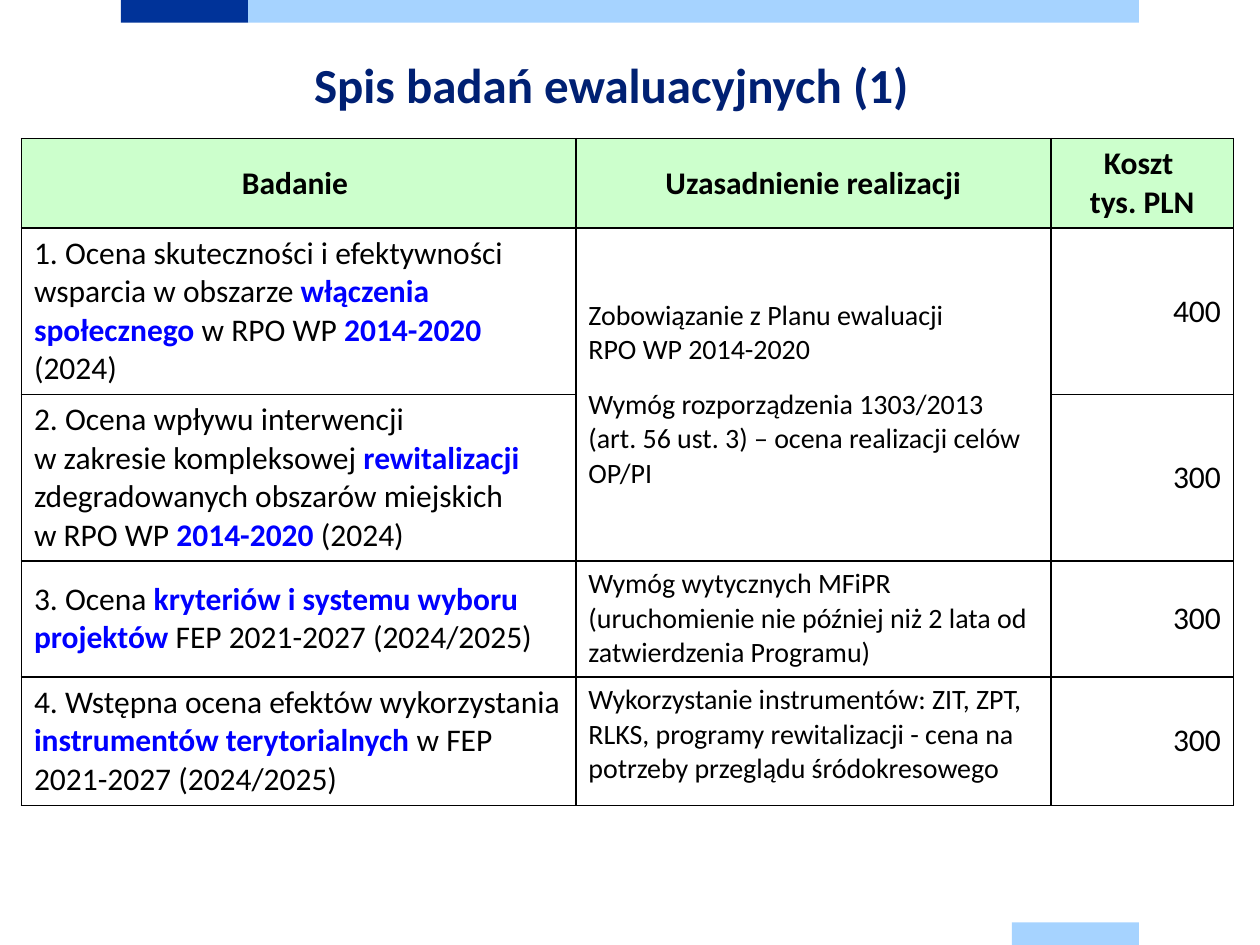
import dataclasses
import itertools
import typing

import pptx
import pptx.dml.color
import pptx.enum.shapes
import pptx.enum.text
import pptx.oxml
import pptx.oxml.ns
import pptx.util

Inches = pptx.util.Inches
Pt = pptx.util.Pt
Align = pptx.enum.text.PP_ALIGN
Anchor = pptx.enum.text.MSO_ANCHOR

FONT = "Calibri"
BLACK = "000000"
BLUE = "0000FF"
NAVY = "002073"
GREEN = "CCFFCC"
SKY = "A6D3FF"


@dataclasses.dataclass
class Bar:
    left: float
    top: float
    width: float
    fill: str


@dataclasses.dataclass
class Study:
    name: str
    reason: str
    cost: str
    height: float
    anchor: typing.Any = Anchor.MIDDLE


BARS = [
    Bar(0.96, 0, 1.01, "003399"),
    Bar(1.97, 0, 7.07, SKY),
    Bar(8.03, 7.32, 1.01, SKY),
]
WIDTHS = [4.4, 3.77, 1.45]
HEADS = ["Badanie ", "Uzasadnienie realizacji", "Koszt ¶tys. PLN"]
HEAD_HEIGHT = 0.71
STUDIES = [
    Study(
        "1. Ocena skuteczności i efektywności wsparcia w obszarze "
        "*włączenia społecznego *w RPO WP *2014-2020* (2024)",
        "Zobowiązanie z Planu ewaluacji \nRPO WP 2014-2020¶"
        "Wymóg rozporządzenia 1303/2013 \n"
        "(art. 56 ust. 3) – ocena realizacji celów OP/PI",
        "400", 1.32, Anchor.TOP),
    Study(
        "2. Ocena wpływu interwencji \nw zakresie kompleksowej "
        "*rewitalizacji \n*zdegradowanych obszarów miejskich \n"
        "w RPO WP *2014-2020 *(2024)",
        "", "300", 1.32, Anchor.TOP),
    Study(
        "3. Ocena *kryteriów i systemu wyboru projektów *"
        "FEP 2021-2027 (2024/2025)",
        "Wymóg wytycznych MFiPR \n(uruchomienie nie później niż 2 lata od "
        "zatwierdzenia Programu)",
        "300", 0.92),
    Study(
        "4. Wstępna ocena efektów wykorzystania "
        "*instrumentów terytorialnych *w FEP 2021-2027 (2024/2025)",
        "Wykorzystanie instrumentów: ZIT, ZPT, RLKS, programy rewitalizacji "
        "- cena na potrzeby przeglądu śródokresowego",
        "300", 1.02),
]


def paint(target: typing.Any, shade: str) -> None:
    target.rgb = pptx.dml.color.RGBColor.from_string(shade)


def write(frame, text: str, *, size=18, color=BLACK, bold=False,
          align=Align.LEFT, gap=0, line=None) -> None:
    for i, part in enumerate(text.split("¶")):
        para = frame.paragraphs[0] if i == 0 else frame.add_paragraph()
        para.alignment = align
        para.space_before = Pt(gap if i else 0)
        para.space_after = Pt(gap)
        if line:
            para.line_spacing = Pt(line)
        for j, piece in enumerate(part.split("*")):
            key = j % 2 == 1
            for k, words in enumerate(piece.split("\n")):
                if k:
                    para.add_line_break()
                if words:
                    run = para.add_run()
                    run.text = words
                    run.font.name = FONT
                    run.font.size = Pt(size)
                    run.font.bold = bold or key
                    paint(run.font.color, BLUE if key else color)


def draw_bar(slide, bar: Bar) -> None:
    shape = slide.shapes.add_shape(
        pptx.enum.shapes.MSO_SHAPE.RECTANGLE,
        Inches(bar.left), Inches(bar.top), Inches(bar.width), Inches(0.18))
    shape.shadow.inherit = False
    shape.fill.solid()
    paint(shape.fill.fore_color, bar.fill)
    shape.line.fill.background()


def frame_cell(cell) -> None:
    props = cell._tc.get_or_add_tcPr()
    for side in "LRTB":
        props.append(pptx.oxml.parse_xml(
            f'<a:ln{side} {pptx.oxml.ns.nsdecls("a")} w="{Pt(1)}">'
            f'<a:solidFill><a:srgbClr val="{BLACK}"/></a:solidFill>'
            f'</a:ln{side}>'))


def draw_table(slide) -> None:
    heights = [HEAD_HEIGHT] + [study.height for study in STUDIES]
    table = slide.shapes.add_table(
        len(heights), len(WIDTHS), Inches(0.17), Inches(1.1),
        Inches(sum(WIDTHS)), Inches(sum(heights))).table
    table.horz_banding = False
    for col, width in zip(table.columns, WIDTHS):
        col.width = Inches(width)
    for row, height in zip(table.rows, heights):
        row.height = Inches(height)
    for r, c in itertools.product(range(len(heights)), range(len(WIDTHS))):
        cell = table.cell(r, c)
        frame_cell(cell)
        cell.vertical_anchor = Anchor.MIDDLE
        if r == 0:
            cell.fill.solid()
            paint(cell.fill.fore_color, GREEN)
        else:
            cell.fill.background()
    table.cell(1, 1).merge(table.cell(2, 1))

    for c, head in enumerate(HEADS):
        write(table.cell(0, c).text_frame, head, bold=True,
              align=Align.CENTER)
    for r, study in enumerate(STUDIES, 1):
        name, reason, cost = (table.cell(r, c) for c in range(3))
        name.vertical_anchor = study.anchor
        write(name.text_frame, study.name, gap=6)
        if study.reason:
            write(reason.text_frame, study.reason, size=16, gap=6)
        write(cost.text_frame, study.cost, align=Align.RIGHT, gap=6)
    for r in (3, 4):
        table.cell(r, 1).vertical_anchor = Anchor.TOP


def draw_title(slide) -> None:
    title = slide.shapes.title
    title.left, title.top = Inches(0.17), Inches(0.27)
    title.width, title.height = Inches(9.36), Inches(0.83)
    frame = title.text_frame
    frame.word_wrap = True
    frame.vertical_anchor = Anchor.MIDDLE
    frame.margin_left = frame.margin_right = 0
    frame.margin_top = frame.margin_bottom = 0
    write(frame, "Spis badań ewaluacyjnych (1)", size=28, color=NAVY,
          bold=True, align=Align.CENTER, line=30.8)


def main() -> None:
    deck = pptx.Presentation()
    deck.slide_width, deck.slide_height = Inches(10), Inches(7.5)
    slide = deck.slides.add_slide(deck.slide_layouts[5])
    for bar in BARS:
        draw_bar(slide, bar)
    draw_title(slide)
    draw_table(slide)
    deck.save("out.pptx")


if __name__ == "__main__":
    main()
